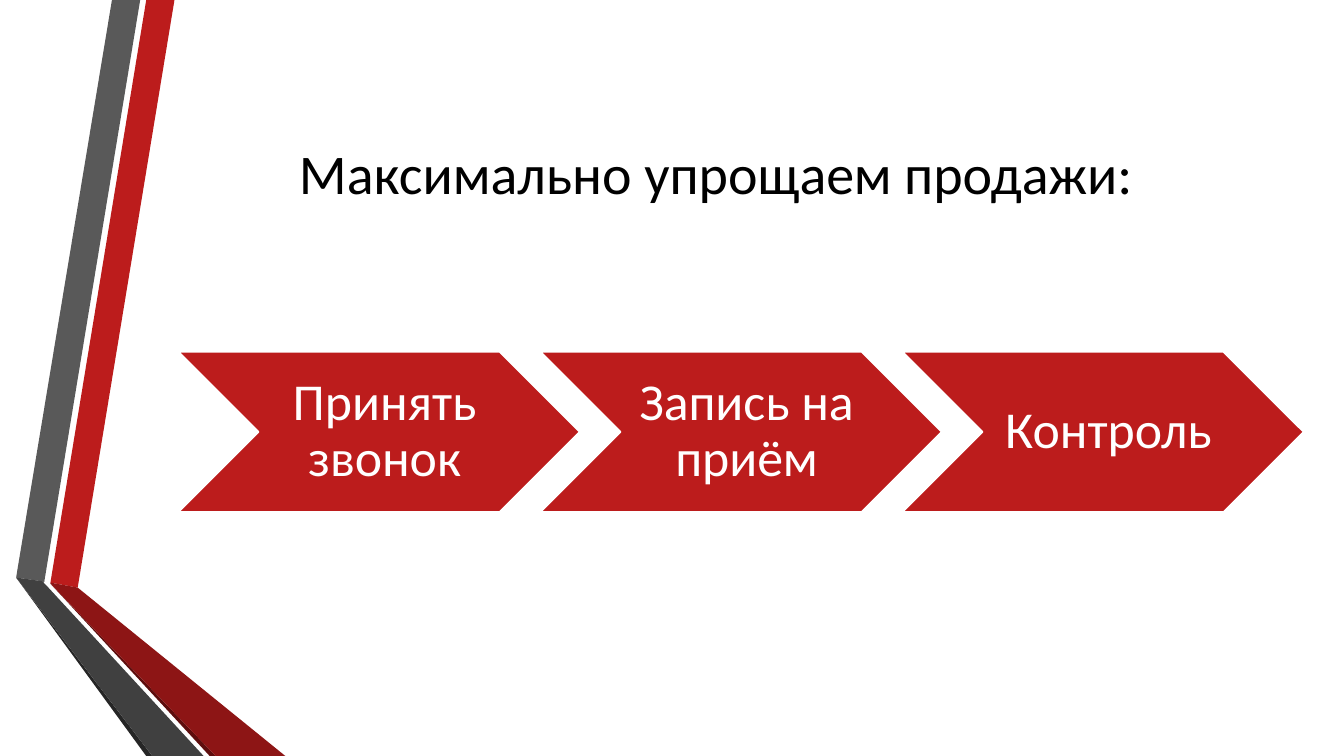
"""Build a slide with a ribbon on the left and a three-step sales process."""
from dataclasses import dataclass

from pptx import Presentation
from pptx.dml.color import RGBColor
from pptx.enum.shapes import MSO_SHAPE
from pptx.enum.text import MSO_ANCHOR, PP_ALIGN
from pptx.util import Emu, Inches, Pt

WIDTH, HEIGHT = Inches(13.33), Inches(7.5)


@dataclass(frozen=True)
class Theme:
    font: str = "Calibri"
    title_size: float = 40
    step_size: float = 37
    outline: float = 1.25
    text: str = "000000"
    white: str = "FFFFFF"
    red: str = "BC1C1C"
    red_shade: str = "8D1515"
    red_edge: str = "5E0E0E"
    gray: str = "595959"
    gray_shade: str = "404040"
    gray_edge: str = "262626"


@dataclass(frozen=True)
class Box:
    """Hold a frame in percent of the slide's width and height."""
    left: float
    top: float
    width: float
    height: float

    def emu(self) -> tuple[Emu, Emu, Emu, Emu]:
        return (across(self.left), down(self.top),
                across(self.width), down(self.height))


@dataclass(frozen=True)
class Band:
    """Hold a ribbon face with corners in percent of the slide's size."""
    color: str
    points: tuple[tuple[float, float], ...]


THEME = Theme()
TITLE = "Максимально упрощаем продажи:"
TITLE_BOX = Box(12.15, 10, 82.22, 25.6)
STEPS = ("Принять звонок", "Запись на приём", "Контроль")
FIRST_STEP = Box(13.28, 46.53, 29.86, 21.2)
STEP_PITCH = 26.93
BANDS = (
    Band(THEME.red, ((3.75, 77.07), (5.78, 77.73), (12.98, 0), (10.88, 0))),
    Band(THEME.gray, ((10.43, 0), (8.33, 0), (1.2, 76.4), (3.3, 76.93))),
    Band(THEME.gray_edge, ((1.2, 76.4), (10.88, 100), (11.33, 100))),
    Band(THEME.red_edge, ((3.75, 77.2), (15.6, 100), (16.05, 100))),
    Band(THEME.red_shade, ((3.75, 77.2), (16.05, 100), (21.23, 100),
                           (5.78, 77.73), (3.75, 77.07))),
    Band(THEME.gray_shade, ((15.15, 100), (3.6, 77.73), (3.23, 77.07),
                            (3.3, 76.93), (1.2, 76.4), (11.33, 100))),
)


def across(share: float) -> Emu:
    return Emu(round(WIDTH * share / 100))


def down(share: float) -> Emu:
    return Emu(round(HEIGHT * share / 100))


def paint(sp, color: str) -> None:
    sp.shadow.inherit = False
    sp.fill.solid()
    sp.fill.fore_color.rgb = RGBColor.from_string(color)


def write(sp, text: str, size: float, color: str):
    tf = sp.text_frame
    tf.word_wrap = True
    tf.vertical_anchor = MSO_ANCHOR.MIDDLE
    p = tf.paragraphs[0]
    p.text = text
    p.alignment = PP_ALIGN.CENTER
    p.font.name = THEME.font
    p.font.size = Pt(size)
    p.font.color.rgb = RGBColor.from_string(color)
    return tf


def add_band(s, band: Band) -> None:
    start, *rest = [(across(x), down(y)) for x, y in band.points]
    builder = s.shapes.build_freeform(*start)
    builder.add_line_segments(rest, close=True)
    sp = builder.convert_to_shape()
    paint(sp, band.color)
    sp.line.fill.background()


def add_step(s, box: Box, text: str) -> None:
    sp = s.shapes.add_shape(MSO_SHAPE.CHEVRON, *box.emu())
    paint(sp, THEME.red)
    sp.line.color.rgb = RGBColor.from_string(THEME.white)
    sp.line.width = Pt(THEME.outline)
    tf = write(sp, text, THEME.step_size, THEME.white)
    tf.margin_left = Inches(0.16)
    tf.margin_right = Inches(0.05)
    tf.paragraphs[0].line_spacing = 0.9


def main() -> None:
    prs = Presentation()
    prs.slide_width, prs.slide_height = WIDTH, HEIGHT
    s = prs.slides.add_slide(prs.slide_layouts[6])
    for band in BANDS:
        add_band(s, band)
    title = s.shapes.add_textbox(*TITLE_BOX.emu())
    write(title, TITLE, THEME.title_size, THEME.text)
    for i, text in enumerate(STEPS):
        box = Box(FIRST_STEP.left + i * STEP_PITCH, FIRST_STEP.top,
                  FIRST_STEP.width, FIRST_STEP.height)
        add_step(s, box, text)
    prs.save("out.pptx")


if __name__ == "__main__":
    main()
